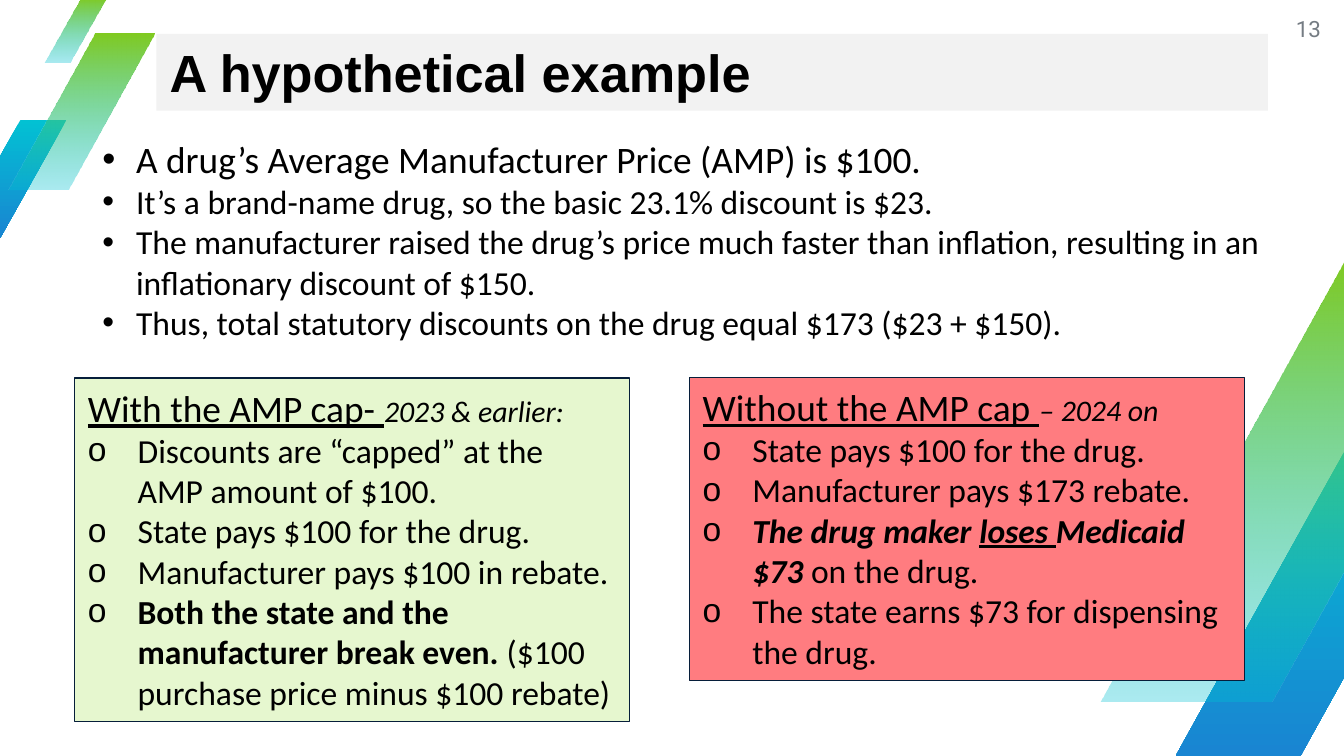
from dataclasses import dataclass

from lxml.etree import SubElement
from pptx import Presentation
from pptx.dml.color import RGBColor
from pptx.enum.shapes import MSO_SHAPE as Preset
from pptx.enum.text import MSO_ANCHOR as Anchor, PP_ALIGN as Align
from pptx.oxml.ns import qn
from pptx.util import Inches, Pt


@dataclass(frozen=True)
class Theme:
    ink: str = "000000"
    muted: str = "757C83"
    banner: str = "F2F2F2"
    outline: str = "061E3A"
    capped: str = "E6F7CF"
    uncapped: str = "FF7C80"
    green: str = "7FCA20"
    teal: str = "02C1D3"
    blue: str = "1985D2"
    display: str = "Arial"
    body: str = "Calibri"
    numeral: str = "Roboto"
    title_size: int = 28
    lead_size: int = 20
    text_size: int = 18
    note_size: int = 16
    number_size: int = 12


@dataclass(frozen=True)
class Box:
    left: float
    top: float
    width: float
    height: float

    def share(self, left, top, width, height):
        return Box(self.left + left * self.width, self.top + top * self.height,
                   width * self.width, height * self.height)

    def place(self):
        return [round(value * CELL) for value in
                (self.left, self.top, self.width, self.height)]


@dataclass(frozen=True)
class Span:
    text: str
    size: int = None
    bold: bool = None
    italic: bool = None
    underline: bool = None


THEME = Theme()
COLUMNS = 100
SLIDE_WIDTH = Inches(10)
SLIDE_HEIGHT = SLIDE_WIDTH * 9 // 16
CELL = SLIDE_WIDTH / COLUMNS


def color(value):
    return RGBColor.from_string(value)


def add_shape(page, preset, box):
    shape = page.shapes.add_shape(preset, *box.place())
    shape.shadow.inherit = False
    shape.line.fill.background()
    return shape


def add_rectangle(page, box, fill):
    shape = add_shape(page, Preset.RECTANGLE, box)
    shape.fill.solid()
    shape.fill.fore_color.rgb = color(fill)
    shape.text_frame.vertical_anchor = Anchor.TOP
    return shape


def add_text_box(page, box):
    frame = page.shapes.add_textbox(*box.place()).text_frame
    frame.word_wrap = True
    return frame


def add_bullet(para, mark, indent):
    props = para._p.get_or_add_pPr()
    props.set("marL", str(Inches(indent)))
    props.set("indent", str(-Inches(indent)))
    tint = SubElement(props, qn("a:buClr"))
    SubElement(tint, qn("a:srgbClr"), val=THEME.ink)
    SubElement(props, qn("a:buFont"), typeface=THEME.display)
    SubElement(props, qn("a:buChar"), char=mark)


def set_font(para, name, size, ink=THEME.ink):
    para.font.name = name
    para.font.size = Pt(size)
    para.font.color.rgb = color(ink)


def write_spans(para, spans):
    for span in spans:
        run = para.add_run()
        run.text = span.text
        if span.size:
            run.font.size = Pt(span.size)
        run.font.bold = span.bold
        run.font.italic = span.italic
        run.font.underline = span.underline


def next_para(frame):
    first = frame.paragraphs[0]
    return frame.add_paragraph() if first.runs else first


def write_item(frame, spans, mark, indent, size=THEME.text_size):
    para = next_para(frame)
    para.alignment = Align.LEFT
    if mark:
        add_bullet(para, mark, indent)
    set_font(para, THEME.body, size)
    write_spans(para, spans)


def add_corner(page, box, stripes):
    for share, start, end, opacity in stripes:
        stripe = add_shape(page, Preset.PARALLELOGRAM, box.share(*share))
        stripe.adjustments[0] = 0.59
        stripe.fill.gradient()
        stripe.fill.gradient_angle = 270
        stops = stripe.fill.gradient_stops
        for stop, value in zip(stops, (start, end)):
            stop.color.rgb = color(value)
        if opacity < 100:
            tint = stops[1]._gs.find(qn("a:srgbClr"))
            SubElement(tint, qn("a:alpha"), val=str(opacity * 1000))


def add_page_number(page, box, number):
    frame = add_text_box(page, box)
    frame.margin_left = frame.margin_right = 0
    frame.margin_top = frame.margin_bottom = 0
    frame.vertical_anchor = Anchor.MIDDLE
    para = frame.paragraphs[0]
    para.alignment = Align.RIGHT
    set_font(para, THEME.numeral, THEME.number_size, THEME.muted)
    write_spans(para, [Span(number)])


def add_title(page, box, text):
    para = add_rectangle(page, box, THEME.banner).text_frame.paragraphs[0]
    para.alignment = Align.LEFT
    set_font(para, THEME.display, THEME.title_size)
    para.font.bold = True
    write_spans(para, [Span(text)])


def add_premises(page, box, lead, points):
    frame = add_text_box(page, box)
    write_item(frame, [Span(lead)], "•", 0.25, THEME.lead_size)
    for point in points:
        write_item(frame, [Span(point)], "•", 0.25)


def add_panel(page, box, fill, heading, period, items):
    panel = add_rectangle(page, box, fill)
    panel.line.color.rgb = color(THEME.outline)
    panel.line.width = Pt(0.75)
    frame = panel.text_frame
    write_item(frame, [Span(heading, THEME.lead_size, underline=True),
                       Span(period, THEME.note_size, italic=True)], None, 0)
    for item in items:
        write_item(frame, item, "o", 0.37)


def main():
    deck = Presentation()
    deck.slide_width, deck.slide_height = SLIDE_WIDTH, SLIDE_HEIGHT
    page = deck.slides.add_slide(deck.slide_layouts[6])
    deep = (THEME.teal, THEME.blue, 100)
    fresh = (THEME.green, THEME.teal, 33)
    add_corner(page, Box(-3.4, -0.2, 14.9, 17.9), [
        ((0, 0.51, 0.56, 0.49), *deep),
        ((0.27, 0.15, 0.73, 0.65), *fresh),
        ((0.45, 0, 0.31, 0.27), *fresh)])
    add_corner(page, Box(81.9, 19.2, 31, 37.05), [
        ((0.18, 0.35, 0.73, 0.65), *deep),
        ((0, 0, 1, 0.89), *fresh)])
    add_page_number(page, Box(93.6, 0, 4.7, 4.3), "13")
    add_title(page, Box(11.64, 2.53, 82.7, 5.7), "A hypothetical example")
    add_premises(page, Box(6.64, 9.64, 89.3, 17.8),
                 "A drug’s Average Manufacturer Price (AMP) is $100.", [
        "It’s a brand-name drug, so the basic 23.1% discount is $23.",
        "The manufacturer raised the drug’s price much faster than inflation, "
        "resulting in an inflationary discount of $150.",
        "Thus, total statutory discounts on the drug equal $173 ($23 + $150)."])
    add_panel(page, Box(5.56, 28.14, 41.3, 25.56), THEME.capped,
              "With the AMP cap- ", "2023 & earlier:", [
        [Span("Discounts are “capped” at the AMP amount of $100.")],
        [Span("State pays $100 for the drug.")],
        [Span("Manufacturer pays $100 in rebate.")],
        [Span("Both the state and the manufacturer break even. ", bold=True),
         Span("($100 purchase price minus $100 rebate)")]])
    add_panel(page, Box(51.3, 28.1, 41.3, 22.56), THEME.uncapped,
              "Without the AMP cap ", "– 2024 on", [
        [Span("State pays $100 for the drug.")],
        [Span("Manufacturer pays $173 rebate.")],
        [Span("The drug maker ", bold=True, italic=True),
         Span("loses ", bold=True, italic=True, underline=True),
         Span("Medicaid $73 ", bold=True, italic=True),
         Span("on the drug.")],
        [Span("The state earns $73 for dispensing the drug.")]])
    deck.save("out.pptx")


if __name__ == "__main__":
    main()
